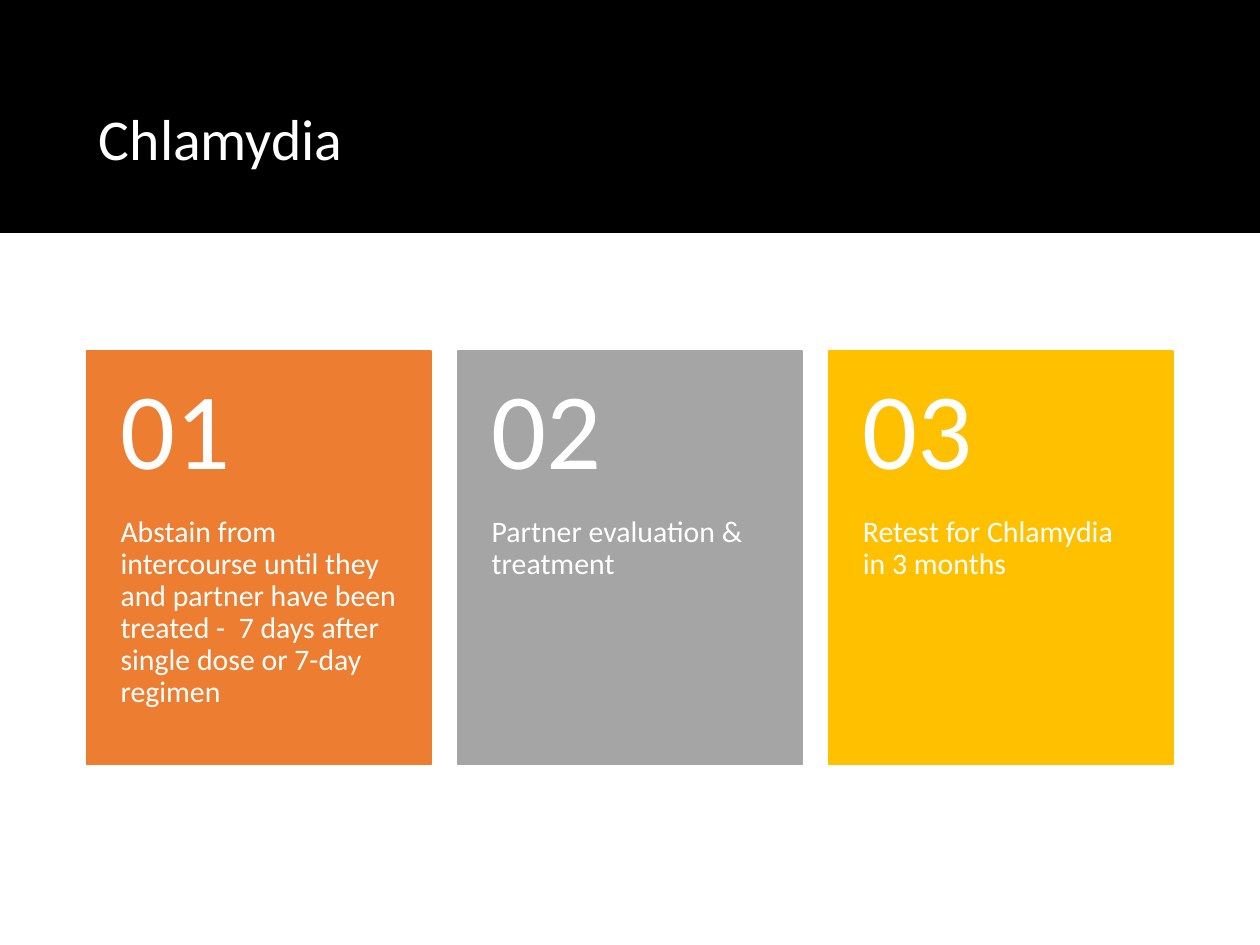
from pptx import Presentation
from pptx import util as u
from pptx.dml import color
from pptx.enum import shapes, text

Pt = u.Pt
HEX = {"band": "000000", "page": "FFFFFF", "text": "FFFFFF",
       "orange": "ED7D31", "grey": "A5A5A5", "gold": "FFC000"}

deck = Presentation()
deck.slide_width, deck.slide_height = Pt(720), Pt(540)
slide = deck.slides.add_slide(deck.slide_layouts[6])


def add_box(left, top, width, height, tone, edge=False):
    box = slide.shapes.add_shape(shapes.MSO_SHAPE.RECTANGLE,
                                 Pt(left), Pt(top), Pt(width), Pt(height))
    box.shadow.inherit = False
    box.fill.solid()
    box.fill.fore_color.rgb = color.RGBColor.from_string(HEX[tone])
    if edge:
        box.line.color.rgb = color.RGBColor.from_string(HEX[tone])
        box.line.width = Pt(1)
    else:
        box.line.fill.background()


def add_text(words, left, top, width, height, size, pads, anchor):
    frame = slide.shapes.add_textbox(Pt(left), Pt(top), Pt(width),
                                     Pt(height)).text_frame
    form = {"word_wrap": True, "vertical_anchor": anchor}
    for side, pad in zip(("left", "top", "right", "bottom"), pads):
        form["margin_" + side] = Pt(pad)
    for key, value in form.items():
        setattr(frame, key, value)
    para = frame.paragraphs[0]
    para.line_spacing = 0.9
    run = para.add_run()
    run.text = words
    for key, value in {"name": "Calibri", "size": Pt(size)}.items():
        setattr(run.font, key, value)
    run.font.color.rgb = color.RGBColor.from_string(HEX["text"])


TOP, MID = text.MSO_ANCHOR.TOP, text.MSO_ANCHOR.MIDDLE

# Title band and page below it
BAND = 133.2
add_box(0, 0, 720, BAND, "band")
add_box(0, BAND, 720, 540 - BAND, "page")
add_text("Chlamydia", 49.5, 28.8, 621, 104.4, 33, (7.2, 3.6, 7.2, 3.6), MID)

# Three numbered cards
LEFT, CARD_TOP, WIDE, TALL = 49.5, 200.7, 196.8, 236.2
STEP = (720 - 2 * LEFT - WIDE) / 2
HEAD = TALL * 0.4
cards = [
    ("orange", "Abstain from intercourse until they and partner have been "
               "treated -  7 days after single dose or 7-day regimen"),
    ("grey", "Partner evaluation & treatment"),
    ("gold", "Retest for Chlamydia in 3 months"),
]
for i, (tone, words) in enumerate(cards):
    x = LEFT + i * STEP
    add_box(x, CARD_TOP, WIDE, TALL, tone, edge=True)
    add_text(words, x, CARD_TOP + HEAD, WIDE, TALL - HEAD, 17,
             (19.4, 0, 19.4, 25.9), TOP)
    add_text(f"{i + 1:02d}", x, CARD_TOP, WIDE, HEAD, 62,
             (19.4, 13, 19.4, 13), MID)

deck.save("out.pptx")
